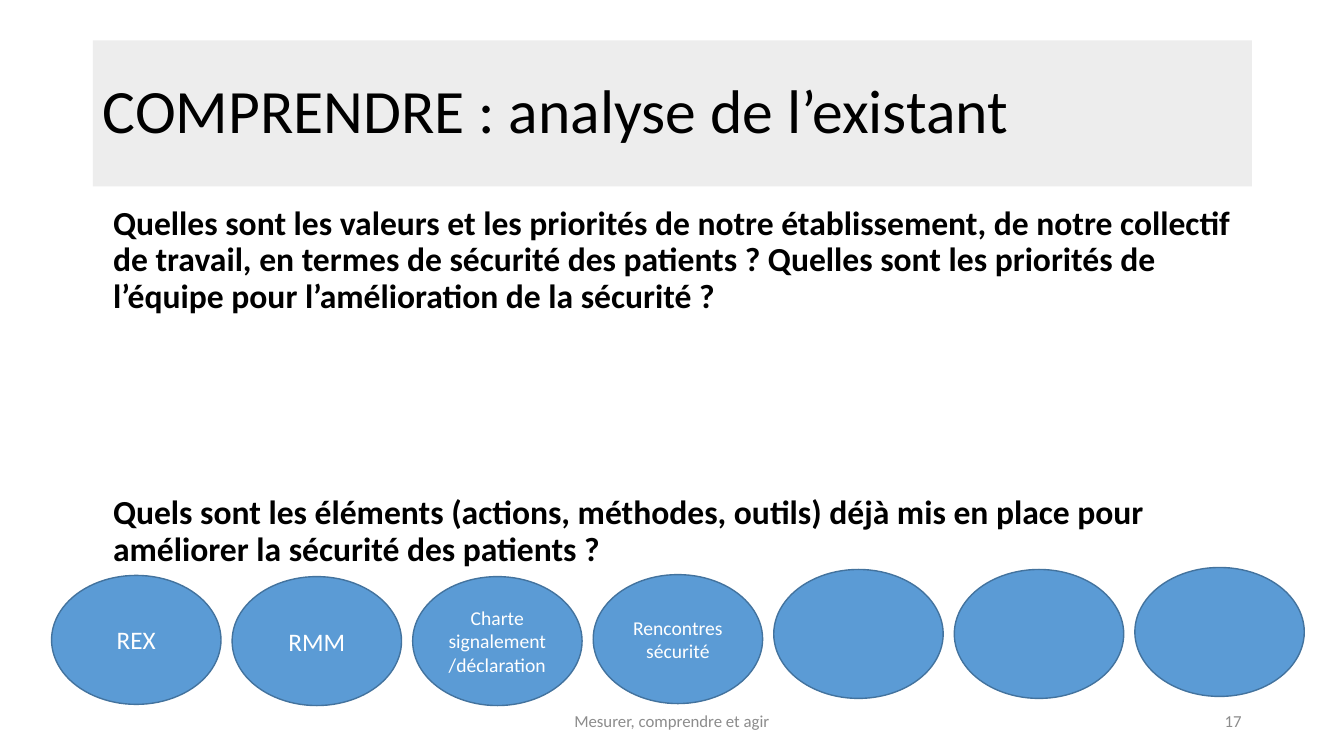
import pptx
import pptx.util
import pptx.dml.color
import pptx.enum.shapes
import pptx.enum.text

Cm, Pt = pptx.util.Cm, pptx.util.Pt
RGBColor = pptx.dml.color.RGBColor
SHAPE = pptx.enum.shapes.MSO_SHAPE
ALIGN = pptx.enum.text.PP_ALIGN
ANCHOR = pptx.enum.text.MSO_ANCHOR

BLACK = RGBColor(0x00, 0x00, 0x00)
WHITE = RGBColor(0xFF, 0xFF, 0xFF)
PALE_GREY = RGBColor(0xED, 0xED, 0xED)
GREY = RGBColor(0x8C, 0x8C, 0x8C)
BLUE = RGBColor(0x5B, 0x9B, 0xD5)
DARK_BLUE = RGBColor(0x43, 0x73, 0x9E)


def write(p, text, size=12, color=BLACK, bold=False, align=ALIGN.LEFT,
          spacing=1.0, before=0):
    p.alignment = align
    p.line_spacing = spacing
    p.space_before = Pt(before)
    r = p.add_run()
    r.text = text
    r.font.name = "Calibri"
    r.font.size = Pt(size)
    r.font.bold = bold
    r.font.color.rgb = color


prs = pptx.Presentation()
prs.slide_width, prs.slide_height = Cm(33.87), Cm(19.05)
s = prs.slides.add_slide(prs.slide_layouts[6])

# Title band
sp = s.shapes.add_shape(SHAPE.RECTANGLE, Cm(2.34), Cm(1.02), Cm(29.21), Cm(3.68))
sp.shadow.inherit = False
sp.fill.solid()
sp.fill.fore_color.rgb = PALE_GREY
sp.line.fill.background()
tf = sp.text_frame
tf.word_wrap = True
tf.vertical_anchor = ANCHOR.MIDDLE
write(tf.paragraphs[0], "COMPRENDRE : analyse de l’existant", size=44, spacing=0.9)

# Questions, with room for answers between them
tf = s.shapes.add_textbox(Cm(2.34), Cm(5.08), Cm(29.97), Cm(12.09)).text_frame
tf.word_wrap = True
tf.margin_left = Cm(0.51)
write(tf.paragraphs[0],
      "Quelles sont les valeurs et les priorités de notre établissement, de notre "
      "collectif de travail, en termes de sécurité des patients ? Quelles sont les "
      "priorités de l’équipe pour l’amélioration de la sécurité ?",
      size=24, bold=True, spacing=0.9, before=5)
write(tf.add_paragraph(),
      "Quels sont les éléments (actions, méthodes, outils) déjà mis en place pour "
      "améliorer la sécurité des patients ?",
      size=24, bold=True, spacing=0.9, before=129)

# Row of ellipses: label, text size, top in cm
tools = [
    ("REX", 18, 14.5),
    ("RMM", 18, 14.53),
    ("Charte signalement/déclaration", 14, 14.53),
    ("Rencontres sécurité", 14, 14.48),
    ("", 14, 14.35),
    ("", 14, 14.35),
    ("", 14, 14.3),
]
for i, (label, size, top) in enumerate(tools):
    sp = s.shapes.add_shape(SHAPE.OVAL, Cm(1.3 + 4.55 * i), Cm(top), Cm(4.27), Cm(3.25))
    sp.shadow.inherit = False
    sp.fill.solid()
    sp.fill.fore_color.rgb = BLUE
    sp.line.color.rgb = DARK_BLUE
    sp.line.width = Pt(1)
    if label:
        tf = sp.text_frame
        tf.word_wrap = True
        tf.vertical_anchor = ANCHOR.MIDDLE
        write(tf.paragraphs[0], label, size=size, color=WHITE, align=ALIGN.CENTER)

# Footer and slide number
for text, left, width, align in [
    ("Mesurer, comprendre et agir", 11.22, 11.43, ALIGN.CENTER),
    ("17", 23.92, 7.62, ALIGN.RIGHT),
]:
    tf = s.shapes.add_textbox(Cm(left), Cm(17.66), Cm(width), Cm(1.01)).text_frame
    tf.word_wrap = True
    tf.vertical_anchor = ANCHOR.MIDDLE
    write(tf.paragraphs[0], text, color=GREY, align=align)

prs.save("out.pptx")
